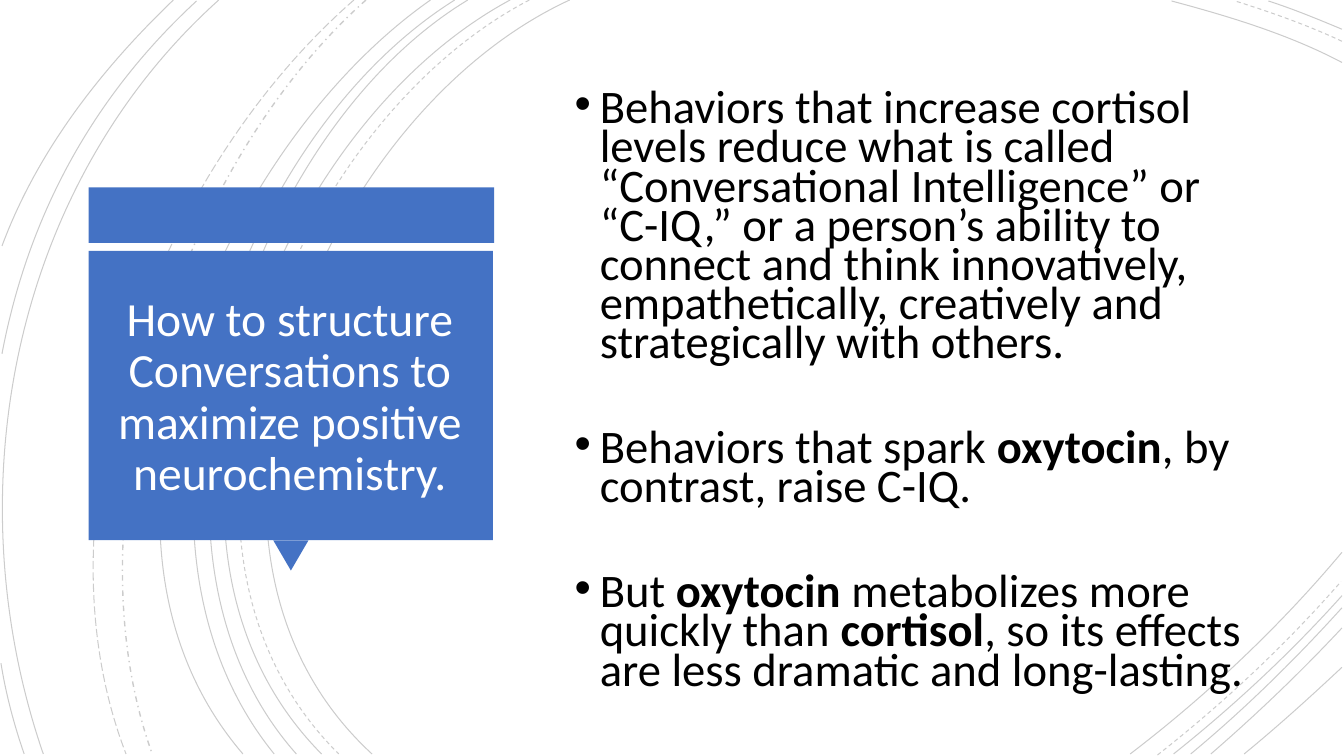
"""Build the slide on structuring conversations for positive neurochemistry."""
from dataclasses import dataclass
from typing import NamedTuple

from lxml import etree
from pptx import Presentation
from pptx import util as u
from pptx.dml.color import RGBColor
from pptx.enum import dml, shapes, text
from pptx.oxml import ns

Point = tuple[float, float]
Runs = list[tuple[str, bool]]
DASH = dml.MSO_LINE


@dataclass(frozen=True)
class Theme:
    """Colours, font and type sizes of the slide."""
    font: str = "Calibri"
    accent: RGBColor = RGBColor(0x44, 0x72, 0xC4)
    ink: RGBColor = RGBColor(0, 0, 0)
    paper: RGBColor = RGBColor(255, 255, 255)
    title_size: float = 34
    body_size: float = 33.3
    arc_opacity: int = 20


class Arc(NamedTuple):
    """A decorative curve: start, two control points, end and line style."""
    start: Point
    first: Point
    second: Point
    end: Point
    dash: DASH = DASH.SOLID
    width: float = 0.75


class Block(NamedTuple):
    """A filled preset shape of the callout."""
    kind: shapes.MSO_SHAPE
    left: float
    top: float
    width: float
    height: float
    rotation: float = 0


THEME = Theme()

ARCS = [
    Arc((5.65, 0), (3.15, 1.15), (1.43, 5.4), (3.69, 7.48)),
    Arc((13.31, 0.62), (12.78, 0.34), (12.18, 0.16), (11.62, 0.01)),
    Arc((11.21, 7.48), (11.97, 6.9), (12.69, 6.22), (13.31, 5.48)),
    Arc((5.25, 0), (2.85, 1.25), (1.23, 5.37), (3.36, 7.48), DASH.DASH),
    Arc((13.31, 0.41), (12.97, 0.25), (12.6, 0.12), (12.25, 0.01), DASH.DASH),
    Arc((11.48, 7.49), (12.13, 6.98), (12.75, 6.4), (13.3, 5.77), DASH.DASH),
    Arc((5.06, 0), (2.7, 1.27), (1.1, 5.37), (3.19, 7.48)),
    Arc((13.31, 0.29), (13.07, 0.19), (12.83, 0.09), (12.58, 0.01)),
    Arc((11.64, 7.48), (12.23, 7.01), (12.8, 6.48), (13.31, 5.91)),
    Arc((4.64, 0), (2.44, 1.33), (1.1, 5.41), (2.94, 7.48)),
    Arc((11.81, 7.48), (12.34, 7.04), (12.84, 6.55), (13.31, 6.03)),
    Arc((4.51, 0), (2.31, 1.38), (0.97, 5.33), (2.72, 7.48)),
    Arc((12.01, 7.48), (12.46, 7.09), (12.9, 6.67), (13.31, 6.23)),
    Arc((4.27, 0), (2.17, 1.47), (0.53, 5.29), (2.41, 7.48)),
    Arc((12.34, 7.48), (12.67, 7.21), (12.99, 6.92), (13.31, 6.62)),
    Arc((3.63, 0), (1.76, 1.66), (0.65, 5.09), (1.51, 7.48), DASH.DASH_DOT, 1),
    Arc((3.51, 0), (1.57, 1.69), (0.29, 4.99), (1.25, 7.48), DASH.LONG_DASH),
    Arc((2.17, 0), (0.11, 1.85), (-0.46, 4.9), (0.43, 7.48)),
    Arc((1.95, 0.01), (0.92, 0.96), (0.28, 2.14), (0.02, 3.51)),
    Arc((0.01, 6.58), (0.06, 6.89), (0.14, 7.19), (0.24, 7.48)),
    Arc((1.72, 0), (1, 0.69), (0.37, 1.5), (0.02, 2.44)),
]

CALLOUT = [
    Block(shapes.MSO_SHAPE.RECTANGLE, 0.88, 1.86, 4.02, 0.55),
    Block(shapes.MSO_SHAPE.ISOSCELES_TRIANGLE, 2.71, 5.36, 0.35, 0.3, 180),
    Block(shapes.MSO_SHAPE.RECTANGLE, 0.88, 2.49, 4.01, 2.87),
]

TITLE: list[Runs] = [
    [("How to structure Conversations to maximize positive neurochemistry.", False)],
]

POINTS: list[Runs] = [
    [("Behaviors that increase cortisol levels reduce what is called "
      "“Conversational Intelligence” or “C-IQ,” or a person’s ability to "
      "connect and think innovatively, empathetically, creatively and "
      "strategically with others.", False)],
    [("Behaviors that spark ", False), ("oxytocin", True),
     (", by contrast, raise C-IQ.", False)],
    [("But ", False), ("oxytocin", True), (" metabolizes more quickly than ", False),
     ("cortisol", True),
     (", so its effects are less dramatic and long-lasting.", False)],
]


def add_arc(slide, arc: Arc) -> None:
    """Draw one curve as a translucent cubic line."""
    corners = [(u.Inches(x), u.Inches(y)) for x, y in arc[:4]]
    builder = slide.shapes.build_freeform(*corners[0])
    builder.add_line_segments(corners[1:], close=False)
    shape = builder.convert_to_shape()
    shape.shadow.inherit = False
    shape.fill.background()
    shape.line.color.rgb = THEME.ink
    shape.line.width = u.Pt(arc.width)
    shape.line.dash_style = arc.dash
    colour = shape.line._get_or_add_ln().find(".//" + ns.qn("a:srgbClr"))
    etree.SubElement(colour, ns.qn("a:alpha"), val=str(THEME.arc_opacity * 1000))
    outline = shape._element.find(".//" + ns.qn("a:path"))
    segments = outline.findall(ns.qn("a:lnTo"))
    curve = etree.SubElement(outline, ns.qn("a:cubicBezTo"))
    for segment in segments:
        curve.append(segment[0])
        outline.remove(segment)


def add_block(slide, block: Block) -> None:
    """Draw one solid part of the callout."""
    frame = map(u.Inches, block[1:5])
    shape = slide.shapes.add_shape(block.kind, *frame)
    shape.rotation = block.rotation
    shape.shadow.inherit = False
    shape.fill.solid()
    shape.fill.fore_color.rgb = THEME.accent
    shape.line.fill.background()


def add_bullet(paragraph, indent: float) -> None:
    """Give a paragraph a round bullet with a hanging indent."""
    properties = paragraph._p.get_or_add_pPr()
    properties.set("marL", str(u.Inches(indent)))
    properties.set("indent", str(-u.Inches(indent)))
    etree.SubElement(properties, ns.qn("a:buFont"), typeface="Arial")
    etree.SubElement(properties, ns.qn("a:buChar"), char="•")


def add_text(slide, paragraphs: list[Runs], *, left: float, top: float,
             width: float, height: float, size: float, color: RGBColor,
             line_spacing: float, align=text.PP_ALIGN.LEFT, gap: float = 0,
             bullet_indent: float = 0, inset_top: float = 0.05) -> None:
    """Add a vertically centred text box with the given format."""
    box = slide.shapes.add_textbox(*map(u.Inches, (left, top, width, height)))
    frame = box.text_frame
    frame.word_wrap = True
    frame.vertical_anchor = text.MSO_ANCHOR.MIDDLE
    frame.margin_top = u.Inches(inset_top)
    for index, runs in enumerate(paragraphs):
        paragraph = frame.add_paragraph() if index else frame.paragraphs[0]
        if bullet_indent:
            add_bullet(paragraph, bullet_indent)
        paragraph.alignment = align
        paragraph.line_spacing = line_spacing
        paragraph.space_before = u.Pt(gap if index else 0)
        for words, bold in runs:
            run = paragraph.add_run()
            run.text = words
            run.font.name = THEME.font
            run.font.size = u.Pt(size)
            run.font.bold = bold
            run.font.color.rgb = color


def main() -> None:
    """Build and save the presentation."""
    presentation = Presentation()
    presentation.slide_width = u.Inches(13.33)
    presentation.slide_height = u.Inches(7.5)
    slide = presentation.slides.add_slide(presentation.slide_layouts[6])
    slide.background.fill.solid()
    slide.background.fill.fore_color.rgb = THEME.paper
    for arc in ARCS:
        add_arc(slide, arc)
    for block in CALLOUT:
        add_block(slide, block)
    add_text(slide, TITLE, left=0.99, top=2.64, width=3.77, height=2.62,
             size=THEME.title_size, color=THEME.paper, line_spacing=0.9,
             align=text.PP_ALIGN.CENTER)
    add_text(slide, POINTS, left=5.6, top=0.53, width=7.01, height=6.62,
             size=THEME.body_size, color=THEME.ink, line_spacing=0.7,
             gap=47, bullet_indent=0.25, inset_top=0.17)
    presentation.save("out.pptx")


if __name__ == "__main__":
    main()
